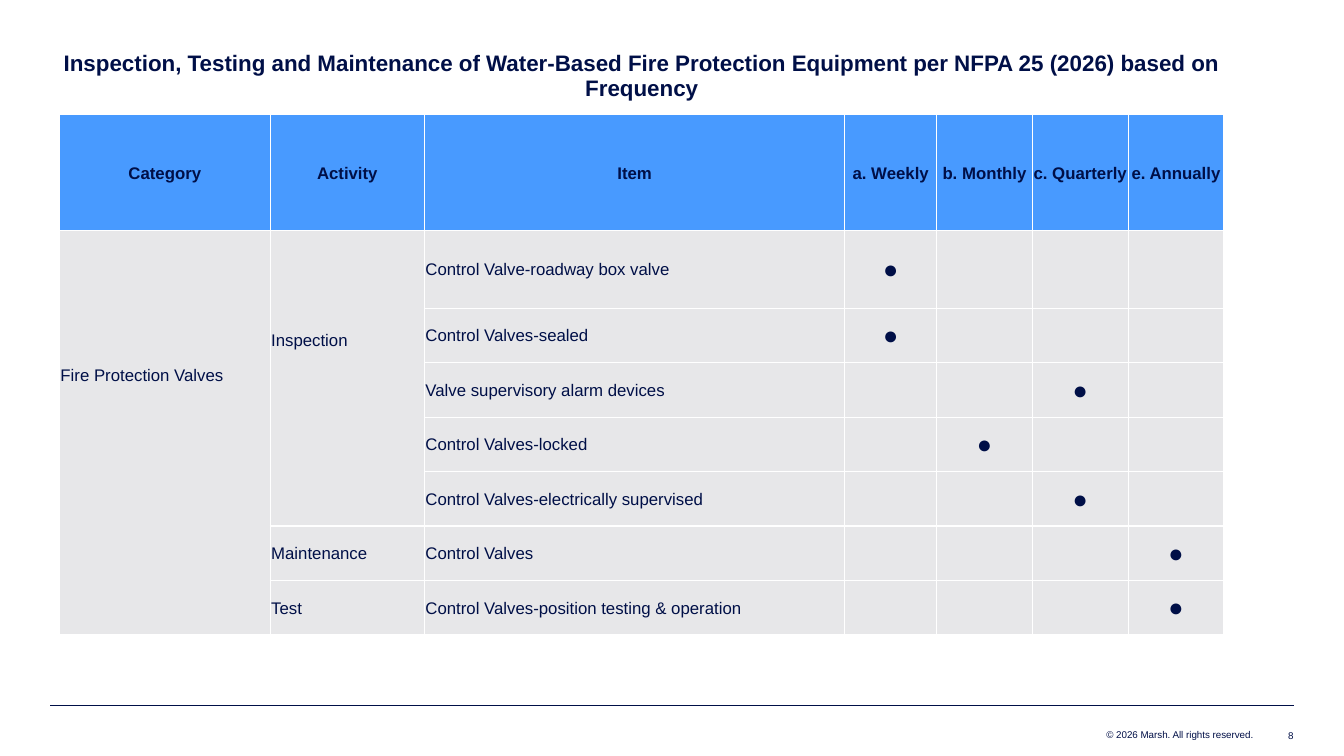
"""Build a slide with the inspection, testing and maintenance table for fire protection valves."""
import pptx
import pptx.dml.color
import pptx.enum.shapes
import pptx.enum.text
import pptx.oxml
import pptx.oxml.ns
import pptx.util
from pptx.util import Inches

COLOURS = {"navy": "000F47", "header": "489AFF", "body": "E7E7E9", "border": "FFFFFF"}
FONT = "Arial"
ALIGN = pptx.enum.text.PP_ALIGN
ANCHOR = pptx.enum.text.MSO_ANCHOR

TITLE = ("Inspection, Testing and Maintenance of Water-Based Fire Protection Equipment "
         "per NFPA 25 (2026) based on Frequency")
HEADERS = ["Category", "Activity", "Item",
           "a. Weekly", "b. Monthly", "c. Quarterly", "e. Annually"]
COLUMN_WIDTHS = [2.09, 1.53, 4.17, 0.91, 0.95, 0.95, 0.95]
ROW_HEIGHTS = [0.77, 1.15, 0.77] + [0.54] * 6
FIRST_ITEM_ROW = 2
ITEMS = [
    ("Control Valve-roadway box valve", "a. Weekly"),
    ("Control Valves-sealed", "a. Weekly"),
    ("Valve supervisory alarm devices", "c. Quarterly"),
    ("Control Valves-locked", "b. Monthly"),
    ("Control Valves-electrically supervised", "c. Quarterly"),
    ("Control Valves", "e. Annually"),
    ("Control Valves-position testing & operation", "e. Annually"),
]


def colour(name):
    """Return the named colour."""
    return pptx.dml.color.RGBColor.from_string(COLOURS[name])


def format_paragraph(para, size, align, bold=False):
    """Set the alignment and font of a paragraph."""
    para.alignment = align
    para.font.name = FONT
    para.font.size = pptx.util.Pt(size)
    para.font.bold = bold
    para.font.color.rgb = colour("navy")


def add_rule(page, left, right, top):
    """Draw the thin horizontal footer line."""
    rule = page.shapes.add_connector(
        pptx.enum.shapes.MSO_CONNECTOR.STRAIGHT,
        Inches(left), Inches(top), Inches(right), Inches(top))
    rule.line.color.rgb = colour("navy")
    rule.line.width = pptx.util.Pt(0.5)
    rule._element.spPr.append(pptx.oxml.parse_xml(
        f"<a:effectLst {pptx.oxml.ns.nsdecls('a')}/>"))


def add_footer_text(page, text, left, top, width, height, anchor):
    """Add a small right-aligned footer text."""
    box = page.shapes.add_textbox(Inches(left), Inches(top), Inches(width), Inches(height))
    frame = box.text_frame
    frame.word_wrap = True
    frame.vertical_anchor = anchor
    frame.margin_left = frame.margin_right = frame.margin_top = frame.margin_bottom = 0
    frame.text = text
    format_paragraph(frame.paragraphs[0], 7, ALIGN.RIGHT)


def style_cell(cell, fill=None):
    """Give a cell its margins, white borders and fill."""
    cell.margin_left = cell.margin_right = cell.margin_top = Inches(0.01)
    cell.margin_bottom = 0
    cell.vertical_anchor = ANCHOR.MIDDLE
    properties = cell._tc.get_or_add_tcPr()
    for side in ("lnL", "lnR", "lnT", "lnB"):
        properties.append(pptx.oxml.parse_xml(
            f'<a:{side} {pptx.oxml.ns.nsdecls("a")} w="12700"><a:solidFill>'
            f'<a:srgbClr val="{COLOURS["border"]}"/></a:solidFill></a:{side}>'))
    if fill:
        cell.fill.solid()
        cell.fill.fore_color.rgb = colour(fill)
    else:
        cell.fill.background()


def write_cell(cell, text, size=12, align=ALIGN.LEFT, bold=False):
    """Write one formatted paragraph in a cell."""
    cell.text = text
    format_paragraph(cell.text_frame.paragraphs[0], size, align, bold)


def write_group(table, column, row, span, text, lift=0.0):
    """Write a label over a span of rows, raised by a bottom margin."""
    cell = table.cell(row, column)
    if span > 1:
        cell.merge(table.cell(row + span - 1, column))
    cell.margin_bottom = Inches(lift)
    write_cell(cell, text)


def add_schedule(page):
    """Add the table of items and their frequencies."""
    frame = page.shapes.add_table(
        len(ROW_HEIGHTS), len(HEADERS), Inches(0.59), Inches(0.37),
        Inches(sum(COLUMN_WIDTHS)), Inches(sum(ROW_HEIGHTS)))
    table = frame.table
    table.first_row = table.horz_banding = False
    for column, width in zip(table.columns, COLUMN_WIDTHS):
        column.width = Inches(width)
    for index, height in enumerate(ROW_HEIGHTS):
        table.rows[index].height = Inches(height)
        fill = {0: None, 1: "header"}.get(index, "body")
        for cell in table.rows[index].cells:
            style_cell(cell, fill)

    table.cell(0, 0).merge(table.cell(0, len(HEADERS) - 1))
    write_cell(table.cell(0, 0), TITLE, 16, ALIGN.CENTER, True)
    for column, header in enumerate(HEADERS):
        write_cell(table.cell(1, column), header, 12, ALIGN.CENTER, True)
    for row, (item, frequency) in enumerate(ITEMS, FIRST_ITEM_ROW):
        write_cell(table.cell(row, HEADERS.index("Item")), item)
        write_cell(table.cell(row, HEADERS.index(frequency)), "●", 18, ALIGN.CENTER)

    write_group(table, 0, FIRST_ITEM_ROW, len(ITEMS), "Fire Protection Valves", 1.15)
    write_group(table, 1, FIRST_ITEM_ROW, 5, "Inspection", 0.77)
    write_group(table, 1, FIRST_ITEM_ROW + 5, 1, "Maintenance")
    write_group(table, 1, FIRST_ITEM_ROW + 6, 1, "Test")


def main():
    """Build and save the deck."""
    deck = pptx.Presentation()
    deck.slide_width, deck.slide_height = Inches(13.33), Inches(7.5)
    page = deck.slides.add_slide(deck.slide_layouts[6])
    add_rule(page, 0.5, 12.83, 7)
    add_footer_text(page, "© 2026 Marsh. All rights reserved.",
                    6.79, 7.22, 5.64, 0.13, ANCHOR.BOTTOM)
    add_footer_text(page, "8", 12.43, 7.24, 0.4, 0.12, ANCHOR.MIDDLE)
    add_schedule(page)
    deck.save("out.pptx")


if __name__ == "__main__":
    main()
